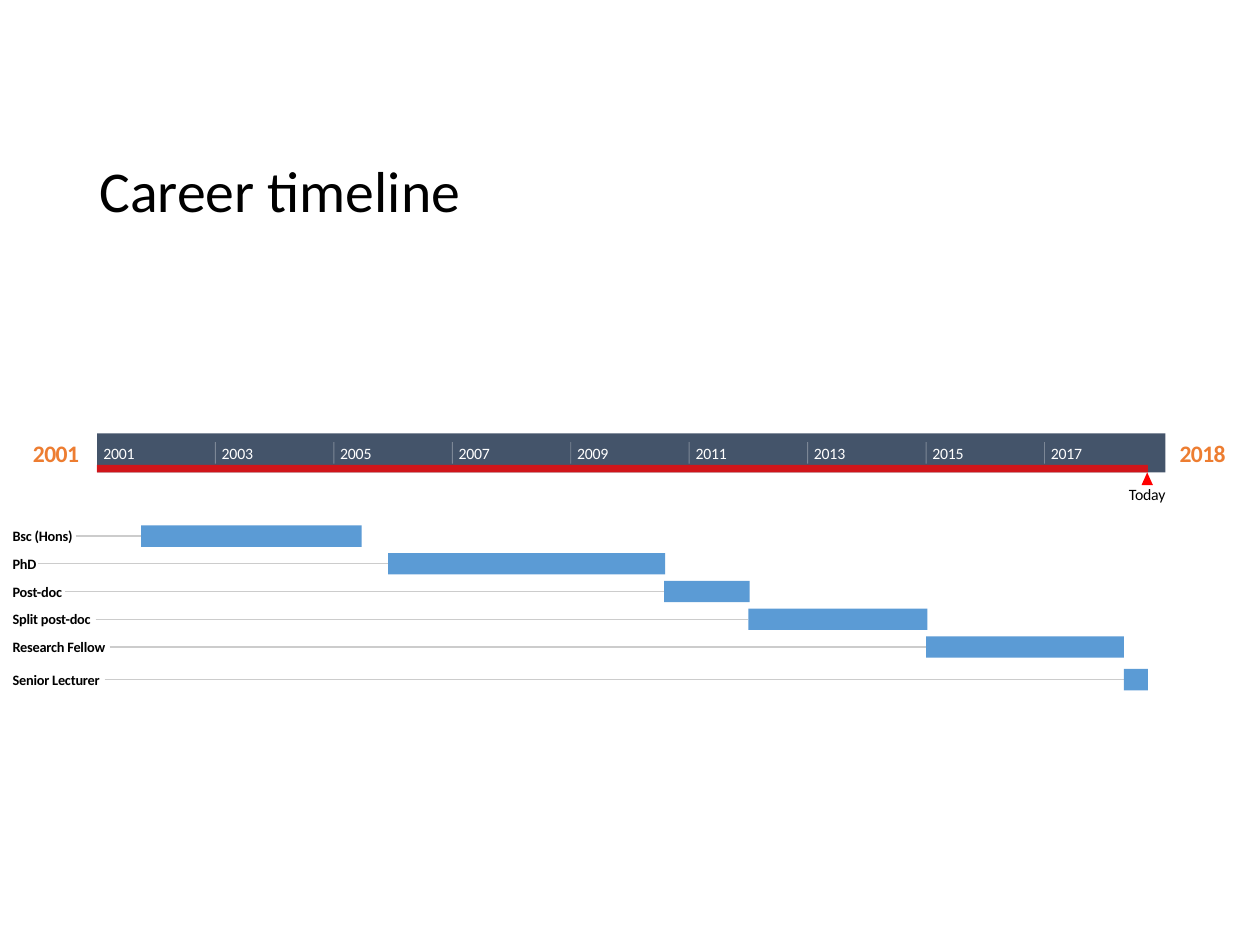
from lxml.etree import SubElement
from pptx import Presentation
from pptx.dml.color import RGBColor
from pptx.enum.shapes import MSO_CONNECTOR, MSO_SHAPE
from pptx.enum.text import MSO_ANCHOR, PP_ALIGN
from pptx.oxml.ns import qn
from pptx.util import Inches, Pt

TITLE = "Career timeline"
YEARS = range(2001, 2018, 2)
# label, label width, bar left, bar width, bar top
STAGES = [
    ("Bsc (Hons)", 0.50, 1.12, 1.75, 4.17),
    ("PhD", 0.20, 3.08, 2.20, 4.39),
    ("Post-doc", 0.42, 5.27, 0.68, 4.61),
    ("Split post-doc", 0.66, 5.94, 1.42, 4.83),
    ("Research Fellow", 0.77, 7.35, 1.57, 5.05),
    ("Senior Lecturer", 0.73, 8.92, 0.19, 5.31),
]
END_YEARS = [("2001", 0.26), ("2018", 9.36)]
COLORS = {
    "band": "44546A", "elapsed": "FF0000", "bar": "5B9BD5", "leader": "CCCCCC",
    "end": "ED7D31", "text": "000000", "light": "FFFFFF",
}
FONT = "Calibri"
BAND_LEFT, BAND_TOP, BAND_WIDTH = 0.77, 3.44, 8.48
YEAR_STEP = 0.94
BAR_HEIGHT = 0.17
LABEL_LEFT, LABEL_HEIGHT = 0.10, 0.14


def color(name):
    return RGBColor.from_string(COLORS[name])


def set_alpha(fill_parent, percent):
    rgb = fill_parent.find(".//" + qn("a:srgbClr"))
    SubElement(rgb, qn("a:alpha")).set("val", str(percent * 1000))


def add_block(page, kind, left, top, width, height, fill, alpha=None):
    block = page.shapes.add_shape(
        kind, Inches(left), Inches(top), Inches(width), Inches(height))
    block.shadow.inherit = False
    block.fill.solid()
    block.fill.fore_color.rgb = color(fill)
    block.line.fill.background()
    if alpha:
        set_alpha(block._element.spPr, alpha)


def add_line(page, x1, y1, x2, y2, stroke, width, alpha=None):
    line = page.shapes.add_connector(
        MSO_CONNECTOR.STRAIGHT, Inches(x1), Inches(y1), Inches(x2), Inches(y2))
    line.line.color.rgb = color(stroke)
    line.line.width = Pt(width)
    properties = line._element.spPr
    if alpha:
        set_alpha(properties, alpha)
    SubElement(properties, qn("a:effectLst"))


def add_text(page, text, left, top, width, height, size, ink="text",
             bold=False, align=PP_ALIGN.LEFT, spacing=-10):
    """Add one tight, vertically centred line; spacing is in 1/100 point."""
    box = page.shapes.add_textbox(
        Inches(left), Inches(top), Inches(width), Inches(height))
    frame = box.text_frame
    frame.word_wrap = False
    frame.vertical_anchor = MSO_ANCHOR.MIDDLE
    frame.margin_left = frame.margin_right = 0
    frame.margin_top = frame.margin_bottom = 0
    para = frame.paragraphs[0]
    para.alignment = align
    span = para.add_run()
    span.text = text
    span.font._element.set("spc", str(spacing))
    para.font.name, para.font.size, para.font.bold = FONT, Pt(size), bold
    para.font.color.rgb = color(ink)


def add_title(page):
    box = page.shapes.add_textbox(
        Inches(0.69), Inches(1.24), Inches(8.62), Inches(1.09))
    box.text_frame.word_wrap = True
    para = box.text_frame.paragraphs[0]
    para.text = TITLE
    para.line_spacing = 0.9
    para.font.name, para.font.size = FONT, Pt(33)
    para.font.color.rgb = color("text")


def add_band(page):
    for year, left in END_YEARS:
        add_text(page, year, left, 3.48, 0.37, 0.23, 13.5, "end",
                 bold=True, align=PP_ALIGN.CENTER, spacing=-30)
    add_block(page, MSO_SHAPE.RECTANGLE,
              BAND_LEFT, BAND_TOP, BAND_WIDTH, 0.31, "band")
    add_block(page, MSO_SHAPE.RECTANGLE,
              BAND_LEFT, 3.69, 8.34, 0.06, "elapsed", alpha=75)
    add_block(page, MSO_SHAPE.ISOSCELES_TRIANGLE,
              9.06, 3.75, 0.09, 0.10, "elapsed")
    add_text(page, "Today", 8.95, 3.85, 0.31, 0.15, 9, align=PP_ALIGN.CENTER)
    for index, year in enumerate(YEARS):
        x = BAND_LEFT + index * YEAR_STEP
        if index:
            add_line(page, x, 3.51, x, 3.68, "light", 0.5, alpha=30)
        add_text(page, str(year), x + 0.05, 3.52, 0.25, 0.15, 9, "light")


def add_stages(page):
    for label, label_width, left, width, top in STAGES:
        middle = top + BAR_HEIGHT / 2
        add_line(page, LABEL_LEFT + label_width, middle, left, middle,
                 "leader", 0.75)
        add_block(page, MSO_SHAPE.RECTANGLE,
                  left, top, width, BAR_HEIGHT, "bar")
        add_text(page, label, LABEL_LEFT, middle - LABEL_HEIGHT / 2,
                 label_width, LABEL_HEIGHT, 8.2, bold=True)


def main():
    deck = Presentation()
    deck.slide_width, deck.slide_height = Inches(10), Inches(7.5)
    page = deck.slides.add_slide(deck.slide_layouts[6])
    add_band(page)
    add_stages(page)
    add_title(page)
    deck.save("out.pptx")


if __name__ == "__main__":
    main()
